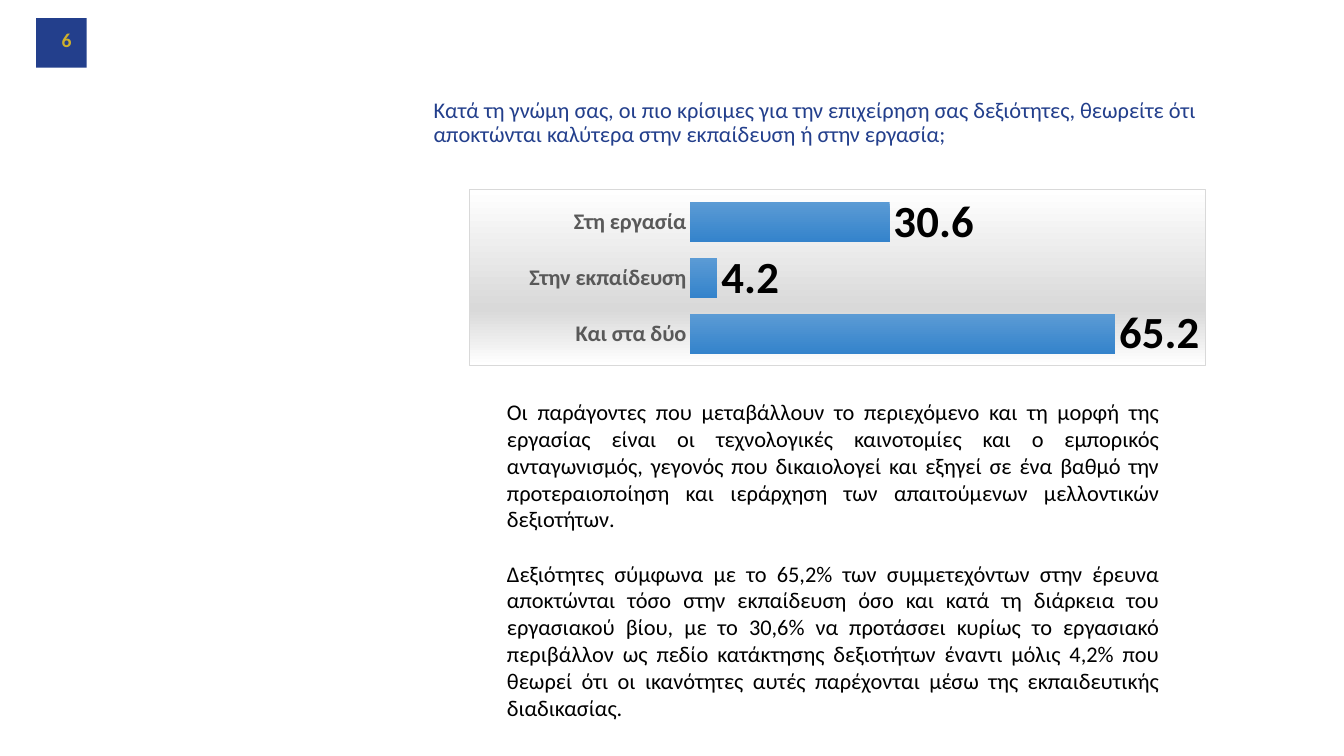
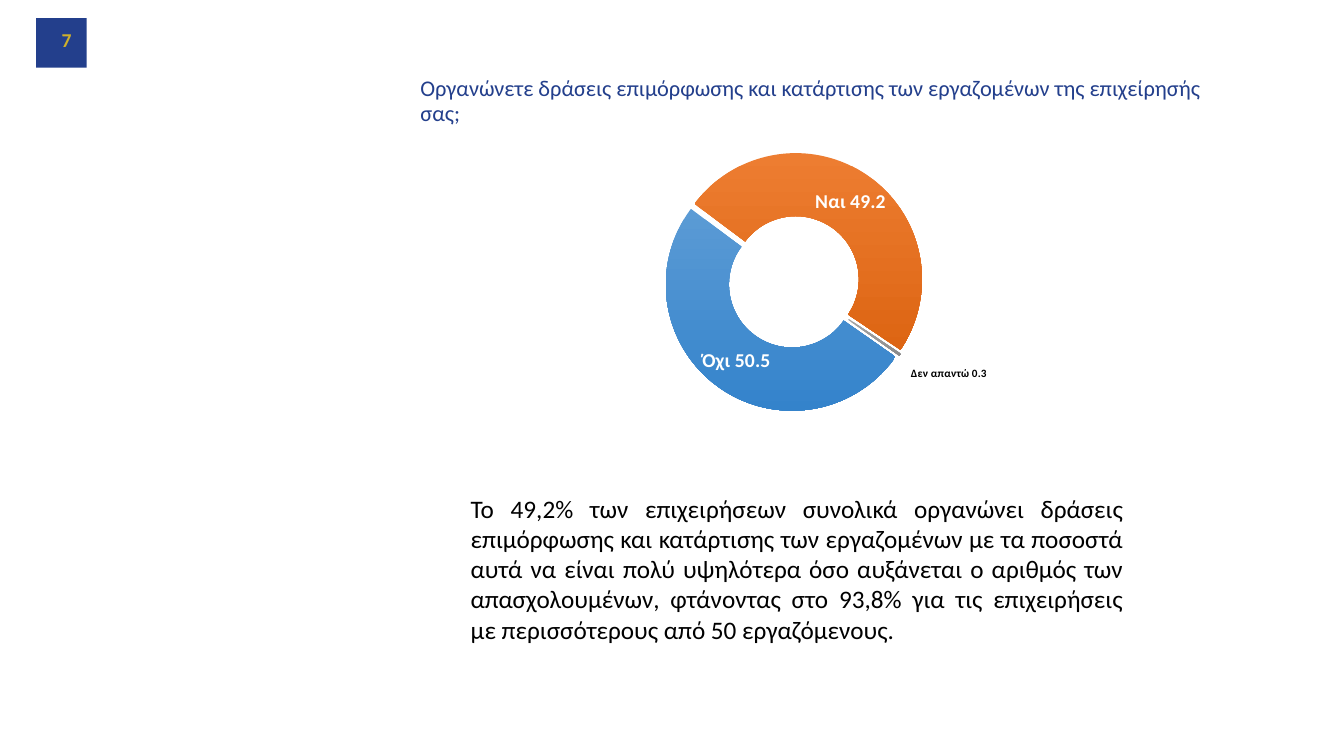
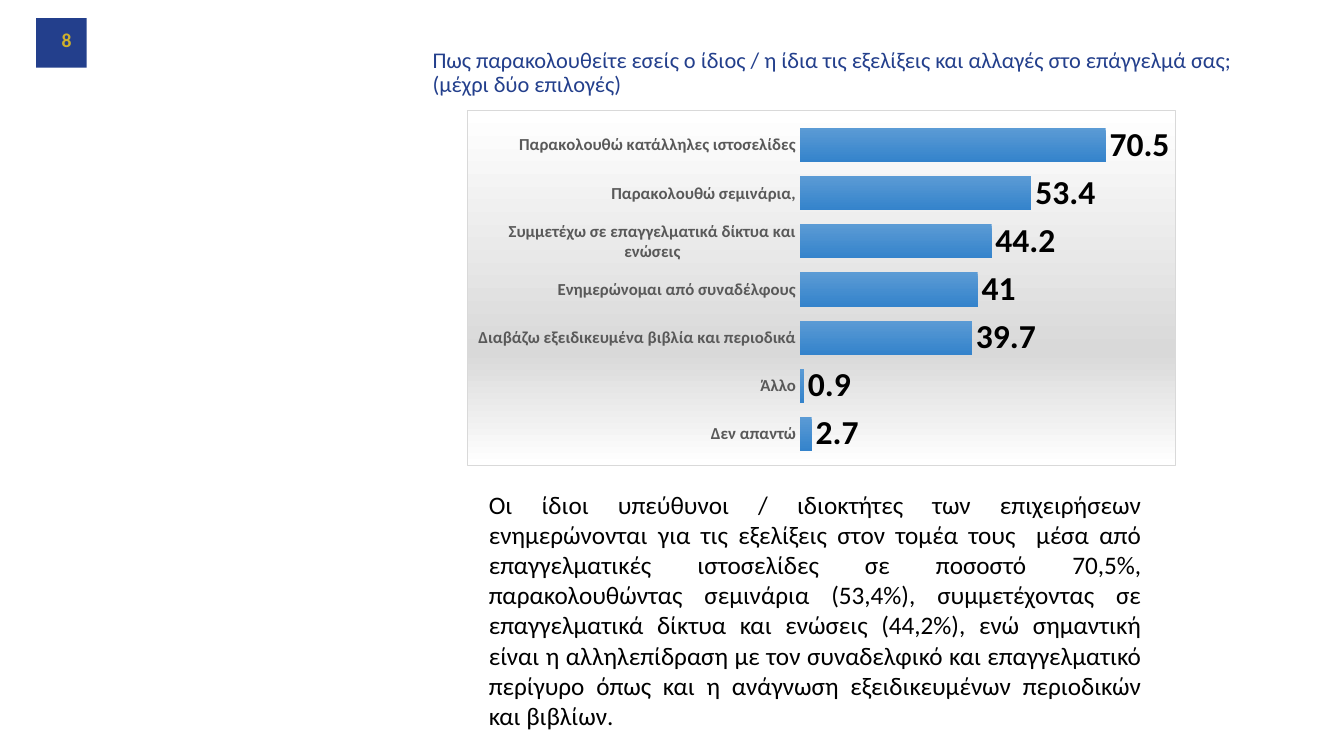
from dataclasses import dataclass

import pptx
import pptx.chart.data
import pptx.dml.color
import pptx.enum.chart
import pptx.enum.shapes
import pptx.enum.text
import pptx.oxml
import pptx.oxml.ns
import pptx.util

Inches = pptx.util.Inches
Pt = pptx.util.Pt
ALIGN = pptx.enum.text.PP_ALIGN
ANCHOR = pptx.enum.text.MSO_ANCHOR
CHART = pptx.enum.chart.XL_CHART_TYPE


@dataclass(frozen=True)
class Theme:
    font: str = "Calibri"
    navy: str = "233F8C"
    gold: str = "CEB02C"
    black: str = "000000"
    white: str = "FFFFFF"
    axis_grey: str = "595959"
    frame_grey: str = "D9D9D9"
    blue: tuple = ("5B9BD5", "3483CB")
    orange: tuple = ("ED7D31", "DD6513")
    grey: tuple = ("A5A5A5", "8B8B8B")
    question_size: float = 16
    number_size: float = 14
    slice_size: float = 14
    small_slice_size: float = 8


THEME = Theme()


def rgb(code):
    return pptx.dml.color.RGBColor.from_string(code)


def style_font(font, size, color, bold=False):
    font.name = THEME.font
    font.size = Pt(size)
    font.bold = bold
    font.color.rgb = rgb(color)


def write_text(frame, text, size, color, bold=False, align=ALIGN.LEFT,
               anchor=ANCHOR.TOP, line_spacing=None, gap=0):
    """Fill a frame, one paragraph a line, with `gap` points between them."""
    frame.word_wrap = True
    frame.auto_size = pptx.enum.text.MSO_AUTO_SIZE.NONE
    frame.vertical_anchor = anchor
    for index, line in enumerate(text.split("\n")):
        paragraph = frame.add_paragraph() if index else frame.paragraphs[0]
        paragraph.alignment = align
        paragraph.line_spacing = line_spacing
        paragraph.space_before = Pt(gap if index else 0)
        run = paragraph.add_run()
        run.text = line
        style_font(run.font, size, color, bold)


def place(shape, box):
    shape.left, shape.top, shape.width, shape.height = map(Inches, box)


# Chart parts
def chart_xml(text):
    return pptx.oxml.parse_xml(
        text.replace(">", " " + pptx.oxml.ns.nsdecls("c", "a") + ">", 1))


def manual_layout(x, y, width=None, height=None):
    """Layout as fractions of the chart; without a size it is an offset."""
    inner = ('<c:layoutTarget val="inner"/><c:xMode val="edge"/>'
             '<c:yMode val="edge"/>') if width else ""
    size = f'<c:w val="{width}"/><c:h val="{height}"/>' if width else ""
    return chart_xml(f'<c:layout><c:manualLayout>{inner}<c:x val="{x}"/>'
                     f'<c:y val="{y}"/>{size}</c:manualLayout></c:layout>')


def shade(fill, colors):
    """Vertical gradient, first colour on top."""
    fill.gradient()
    fill.gradient_angle = 270
    for stop, color in zip(fill.gradient_stops, colors):
        stop.color.rgb = rgb(color)


def frame_chart(chart):
    stops = "".join(
        f'<a:gs pos="{pos * 1000}"><a:srgbClr val="{color}"/></a:gs>'
        for pos, color in ((0, THEME.white), (68, THEME.frame_grey),
                           (100, THEME.white)))
    area = chart_xml(
        f'<c:spPr><a:gradFill><a:gsLst>{stops}</a:gsLst>'
        '<a:lin ang="5400000" scaled="0"/></a:gradFill>'
        f'<a:ln w="{Pt(0.75)}"><a:solidFill><a:srgbClr val="{THEME.frame_grey}"/>'
        '</a:solidFill></a:ln></c:spPr>')
    chart.element.xpath("c:chart")[0].addnext(area)


def keep_labels_on_one_line(chart):
    for body in chart.element.xpath(".//c:ser/c:dLbls//c:txPr/a:bodyPr"):
        body.set("wrap", "none")


def add_chart(slide, kind, box, plot_box, answers):
    data = pptx.chart.data.CategoryChartData()
    data.categories = list(answers)
    data.add_series("Series 1", list(answers.values()))
    chart = slide.shapes.add_chart(kind, *map(Inches, box), data).chart
    chart.has_title = False
    chart.has_legend = False
    style_font(chart.font, 10, THEME.black)
    plot_area = chart.element.xpath("c:chart/c:plotArea")[0]
    for layout in plot_area.xpath("c:layout"):
        plot_area.remove(layout)
    plot_area.insert(0, manual_layout(*plot_box))
    return chart


def add_answer_bars(slide, box, plot_box, answers, axis_max, category_size,
                    value_size):
    chart = add_chart(slide, CHART.BAR_CLUSTERED, box, plot_box, answers)
    frame_chart(chart)
    bars = chart.plots[0]
    bars.gap_width = 41
    bars.vary_by_categories = False
    shade(bars.series[0].format.fill, THEME.blue)

    values = bars.series[0].data_labels
    values.show_value = True
    values.position = pptx.enum.chart.XL_LABEL_POSITION.OUTSIDE_END
    style_font(values.font, value_size, THEME.black, bold=True)
    keep_labels_on_one_line(chart)

    categories = chart.category_axis
    categories.major_tick_mark = pptx.enum.chart.XL_TICK_MARK.NONE
    categories.format.line.fill.background()
    style_font(categories.tick_labels.font, category_size, THEME.axis_grey,
               bold=True)
    scale = chart.value_axis
    scale.minimum_scale, scale.maximum_scale = 0, axis_max
    scale.has_major_gridlines = False
    scale.visible = False


def add_answer_ring(slide, box, plot_box, answers):
    chart = add_chart(slide, CHART.DOUGHNUT, box, plot_box, answers)
    root = chart.element
    root.xpath(".//c:firstSliceAng")[0].set("val", "125")
    root.xpath(".//c:holeSize")[0].set("val", "25")
    root.xpath(".//c:ser/c:tx")[0].addnext(
        chart_xml('<c:explosion val="5"></c:explosion>'))
    ring = chart.plots[0].series[0]
    for index, colors in enumerate((THEME.blue, THEME.orange, THEME.grey)):
        shade(ring.points[index].format.fill, colors)

    labels = ring.data_labels
    labels.show_value = True
    labels.show_category_name = True
    style_font(labels.font, THEME.slice_size, THEME.white, bold=True)

    # The thin last slice has its label outside the ring, without a leader
    style_font(ring.points[2].data_label.font, THEME.small_slice_size,
               THEME.black, bold=True)
    outside = root.xpath(".//c:ser/c:dLbls/c:dLbl")[0]
    outside.xpath("c:idx")[0].addnext(manual_layout(0.19, 0.14))
    outside.xpath("c:showCatName")[0].set("val", "1")
    for leader in root.xpath(".//c:showLeaderLines"):
        leader.set("val", "0")
    for flag in root.xpath(".//c:ser//c:showBubbleSize"):
        flag.addnext(chart_xml("<c:separator> </c:separator>"))
    keep_labels_on_one_line(chart)


# Slide parts
def add_badge(slide):
    """Draw the number badge and hand it to the layout all slides use."""
    badge = slide.shapes.add_shape(
        pptx.enum.shapes.MSO_SHAPE.RECTANGLE,
        *map(Inches, (0.36, 0.18, 0.5, 0.49)))
    badge.shadow.inherit = False
    badge.fill.solid()
    badge.fill.fore_color.rgb = rgb(THEME.navy)
    badge.line.fill.background()
    slide.slide_layout.shapes.element.append(badge.element)


def add_question_slide(deck, number, question, question_at, comment,
                       comment_box, comment_size):
    slide = deck.slides.add_slide(deck.slide_layouts[5])
    place(slide.shapes.title, (*question_at, 8.16, 0.76))
    write_text(slide.shapes.title.text_frame, question, THEME.question_size,
               THEME.navy, anchor=ANCHOR.BOTTOM, line_spacing=0.9)
    page_number = slide.shapes.add_textbox(
        *map(Inches, (0.38, 0.19, 0.43, 0.4)))
    write_text(page_number.text_frame, str(number), THEME.number_size,
               THEME.gold, bold=True, align=ALIGN.RIGHT, anchor=ANCHOR.MIDDLE)
    remarks = slide.shapes.add_textbox(*map(Inches, comment_box))
    write_text(remarks.text_frame, comment, comment_size, THEME.black,
               align=ALIGN.JUSTIFY, gap=19.5)
    return slide


def main():
    deck = pptx.Presentation()
    deck.slide_width, deck.slide_height = Inches(13.33), Inches(7.5)

    # Where skills are gained
    skills = add_question_slide(
        deck, 6,
        "Κατά τη γνώμη σας, οι πιο κρίσιμες για την επιχείρηση σας δεξιότητες, "
        "θεωρείτε ότι αποκτώνται καλύτερα στην εκπαίδευση ή στην εργασία;",
        (4.2, 0.75),
        "Οι παράγοντες που μεταβάλλουν το περιεχόμενο και τη μορφή της "
        "εργασίας είναι οι τεχνολογικές καινοτομίες και ο εμπορικός "
        "ανταγωνισμός, γεγονός που δικαιολογεί και εξηγεί σε ένα βαθμό την "
        "προτεραιοποίηση και ιεράρχηση των απαιτούμενων μελλοντικών "
        "δεξιοτήτων.\n"
        "Δεξιότητες σύμφωνα με το 65,2% των συμμετεχόντων στην έρευνα "
        "αποκτώνται τόσο στην εκπαίδευση όσο και κατά τη διάρκεια του "
        "εργασιακού βίου, με το 30,6% να προτάσσει κυρίως το εργασιακό "
        "περιβάλλον ως πεδίο κατάκτησης δεξιοτήτων έναντι μόλις 4,2% που "
        "θεωρεί ότι οι ικανότητες αυτές παρέχονται μέσω της εκπαιδευτικής "
        "διαδικασίας.",
        (4.93, 3.9, 6.67, 3.33), 16)
    add_badge(skills)
    add_answer_bars(
        skills, (4.65, 1.87, 7.31, 1.76), (0.3, 0.03, 0.62, 0.95),
        {"Και στα δύο": 65.2, "Στην εκπαίδευση": 4.2, "Στη εργασία": 30.6},
        axis_max=70, category_size=16, value_size=32)

    # Staff training
    training = add_question_slide(
        deck, 7,
        "Οργανώνετε δράσεις επιμόρφωσης και κατάρτισης των εργαζομένων της "
        "επιχείρησής σας;",
        (4.07, 0.54),
        "Το 49,2% των επιχειρήσεων συνολικά οργανώνει δράσεις επιμόρφωσης και "
        "κατάρτισης των εργαζομένων με τα ποσοστά αυτά να είναι πολύ "
        "υψηλότερα όσο αυξάνεται ο αριθμός των απασχολουμένων, φτάνοντας στο "
        "93,8% για τις επιχειρήσεις με περισσότερους από 50 εργαζόμενους.",
        (4.57, 4.84, 6.67, 1.62), 18)
    add_answer_ring(
        training, (5.84, 1.48, 3.95, 2.61), (0.19, 0.01, 0.65, 0.99),
        {"Όχι": 50.5, "Ναι": 49.2, "Δεν απαντώ": 0.3})

    # Following the profession
    sources = add_question_slide(
        deck, 8,
        "Πως παρακολουθείτε εσείς ο ίδιος / η ίδια τις εξελίξεις και αλλαγές "
        "στο επάγγελμά σας; (μέχρι δύο επιλογές)",
        (4.19, 0.26),
        "Οι ίδιοι υπεύθυνοι / ιδιοκτήτες των επιχειρήσεων ενημερώνονται για "
        "τις εξελίξεις στον τομέα τους  μέσα από επαγγελματικές ιστοσελίδες "
        "σε ποσοστό 70,5%, παρακολουθώντας σεμινάρια (53,4%), συμμετέχοντας "
        "σε επαγγελματικά δίκτυα και ενώσεις (44,2%), ενώ σημαντική είναι η "
        "αλληλεπίδραση με τον συναδελφικό και επαγγελματικό περίγυρο όπως και "
        "η ανάγνωση εξειδικευμένων περιοδικών και βιβλίων.",
        (4.75, 4.8, 6.67, 2.52), 18)
    add_answer_bars(
        sources, (4.63, 1.09, 7.03, 3.53), (0.47, 0.03, 0.49, 0.95),
        {"Δεν απαντώ": 2.7,
         "Άλλο": 0.9,
         "Διαβάζω εξειδικευμένα βιβλία και περιοδικά": 39.7,
         "Ενημερώνομαι από συναδέλφους": 41,
         "Συμμετέχω σε επαγγελματικά δίκτυα και ενώσεις": 44.2,
         "Παρακολουθώ σεμινάρια,": 53.4,
         "Παρακολουθώ κατάλληλες ιστοσελίδες": 70.5},
        axis_max=80, category_size=12, value_size=24)

    deck.save("out.pptx")


if __name__ == "__main__":
    main()
